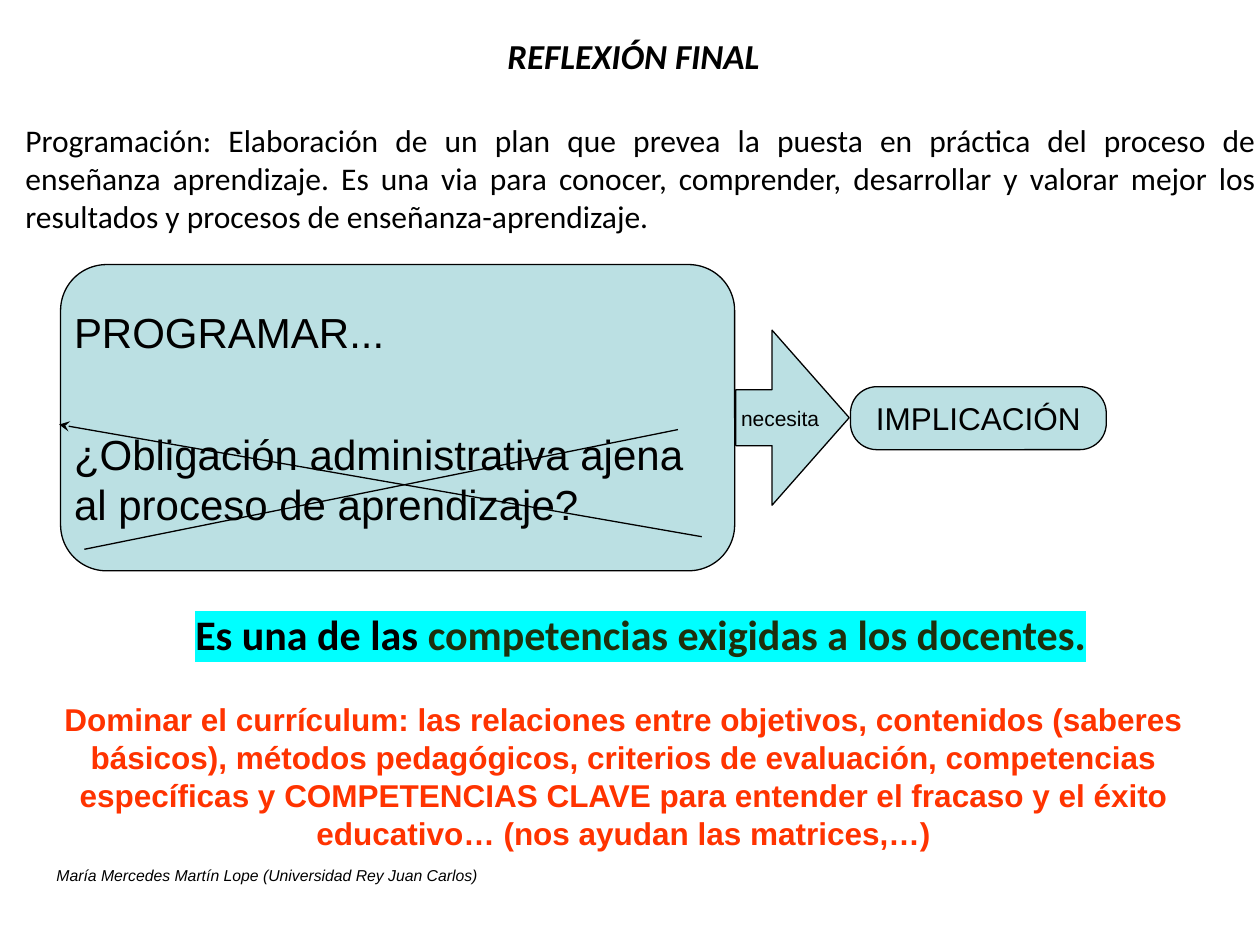
from pptx import Presentation
from pptx.util import Pt
from pptx.dml.color import RGBColor
from pptx.enum.shapes import MSO_SHAPE, MSO_CONNECTOR
from pptx.enum.text import PP_ALIGN, MSO_ANCHOR, MSO_AUTO_SIZE
from pptx.oxml.ns import qn
from lxml.etree import SubElement, Element


def color(target, code):
    target.rgb = RGBColor.from_string(code)


def write(par, text, size, face, code="000000", **style):
    run = par.add_run()
    run.text = text
    for key, val in dict(style, size=Pt(size), name=face).items():
        setattr(run.font, key, val)
    color(run.font.color, code)
    return run


deck = Presentation()
deck.slide_width, deck.slide_height = Pt(720), Pt(540)
slide = deck.slides.add_slide(deck.slide_layouts[1])
shapes = slide.shapes
title, body = slide.placeholders

# Title and body frames
places = [
    (title, (8.6, -2.2, 702.7, 67.7), (5, 0, 0.7, 0), MSO_ANCHOR.MIDDLE),
    (body, (7.2, 64.8, 712.8, 319), (4.3, 4.3, 2.2, 4.3), MSO_ANCHOR.TOP),
]
for item, spot, pads, anchor in places:
    item.left, item.top, item.width, item.height = map(Pt, spot)
    frame = item.text_frame
    form = dict(zip(("margin_left", "margin_top", "margin_right", "margin_bottom"), map(Pt, pads)))
    form.update(vertical_anchor=anchor, word_wrap=True, auto_size=MSO_AUTO_SIZE.NONE)
    for key, val in form.items():
        setattr(frame, key, val)

head = title.text_frame.paragraphs[0]
head.alignment = PP_ALIGN.CENTER
write(head, "REFLEXIÓN FINAL", 20, "Calibri", bold=True, italic=True)

# Definition and closing claim
intro = body.text_frame.paragraphs[0]
claim = body.text_frame.add_paragraph()
for par, align, gap in [(intro, PP_ALIGN.JUSTIFY, 0), (claim, PP_ALIGN.CENTER, 214)]:
    props = par._p.get_or_add_pPr()
    props.set("marL", str(Pt(3)))
    props.set("indent", "0")
    SubElement(props, qn("a:buNone"))
    par.alignment = align
    par.space_before = Pt(gap)
write(intro, "Programación: Elaboración de un plan que prevea la puesta en práctica del proceso de "
      "enseñanza aprendizaje. Es una via para conocer, comprender, desarrollar y valorar mejor los "
      "resultados y procesos de enseñanza-aprendizaje.", 18, "Calibri")
for text, code in [("Es una de las ", "000000"),
                   ("competencias exigidas a los docentes.", "1D300D")]:
    run = write(claim, text, 24, "Calibri", code, bold=True)
    mark = Element(qn("a:highlight"))
    SubElement(mark, qn("a:srgbClr")).set("val", "00FFFF")
    run.font._element.find(qn("a:solidFill")).addnext(mark)

# Diagram: question, arrow, answer
steps = [
    (MSO_SHAPE.ROUNDED_RECTANGLE, (486, 221, 146.2, 36), [0.42], 0, PP_ALIGN.CENTER, 18,
     ["IMPLICACIÓN"]),
    (MSO_SHAPE.ROUNDED_RECTANGLE, (34.6, 151.2, 385.2, 175), [0.15], 0, PP_ALIGN.LEFT, 24,
     ["PROGRAMAR...", "¿Obligación administrativa ajena al proceso de aprendizaje?"]),
    (MSO_SHAPE.RIGHT_ARROW, (420.5, 188.7, 64.8, 100), [0.32, 0.68], 3, PP_ALIGN.LEFT, 12,
     ["necesita"]),
]
for kind, spot, bends, pad, align, size, texts in steps:
    box = shapes.add_shape(kind, *map(Pt, spot))
    for num, bend in enumerate(bends):
        box.adjustments[num] = bend
    box.shadow.inherit = False
    box.fill.solid()
    color(box.fill.fore_color, "BBE0E3")
    color(box.line.color, "000000")
    box.line.width = Pt(0.75)
    frame = box.text_frame
    form = dict(margin_left=Pt(pad), margin_right=0, margin_top=0, margin_bottom=0,
                word_wrap=True, vertical_anchor=MSO_ANCHOR.MIDDLE)
    for key, val in form.items():
        setattr(frame, key, val)
    for num, text in enumerate(texts):
        par = frame.add_paragraph() if num else frame.paragraphs[0]
        par.alignment = align
        par.space_before = Pt(41 if num else 0)
        write(par, text, size, "Arial")

# Cross over the question
for ends, tip in [((33.8, 242.6, 401, 306.7), True), ((48.2, 313.9, 387.4, 245.5), False)]:
    line = shapes.add_connector(MSO_CONNECTOR.STRAIGHT, *map(Pt, ends))
    color(line.line.color, "000000")
    line.line.width = Pt(0.75)
    if tip:
        SubElement(line.line._get_or_add_ln(), qn("a:headEnd")).set("type", "stealth")
    SubElement(line._element.spPr, qn("a:effectLst"))

# Conclusion and author
notes = [
    ((0, 396.7, 712.8, 94.3), PP_ALIGN.CENTER, 18, "FF3300", dict(bold=True),
     "Dominar el currículum: las relaciones entre objetivos, contenidos (saberes básicos), "
     "métodos pedagógicos, criterios de evaluación, competencias específicas y COMPETENCIAS "
     "CLAVE para entender el fracaso y el éxito educativo… (nos ayudan las matrices,…)"),
    ((25.2, 491, 584, 18), PP_ALIGN.LEFT, 9, "000000", dict(italic=True),
     "María Mercedes Martín Lope (Universidad Rey Juan Carlos)"),
]
for spot, align, size, code, style, text in notes:
    frame = shapes.add_textbox(*map(Pt, spot)).text_frame
    frame.word_wrap = True
    par = frame.paragraphs[0]
    par.alignment = align
    write(par, text, size, "Arial", code, **style)

deck.save("out.pptx")
